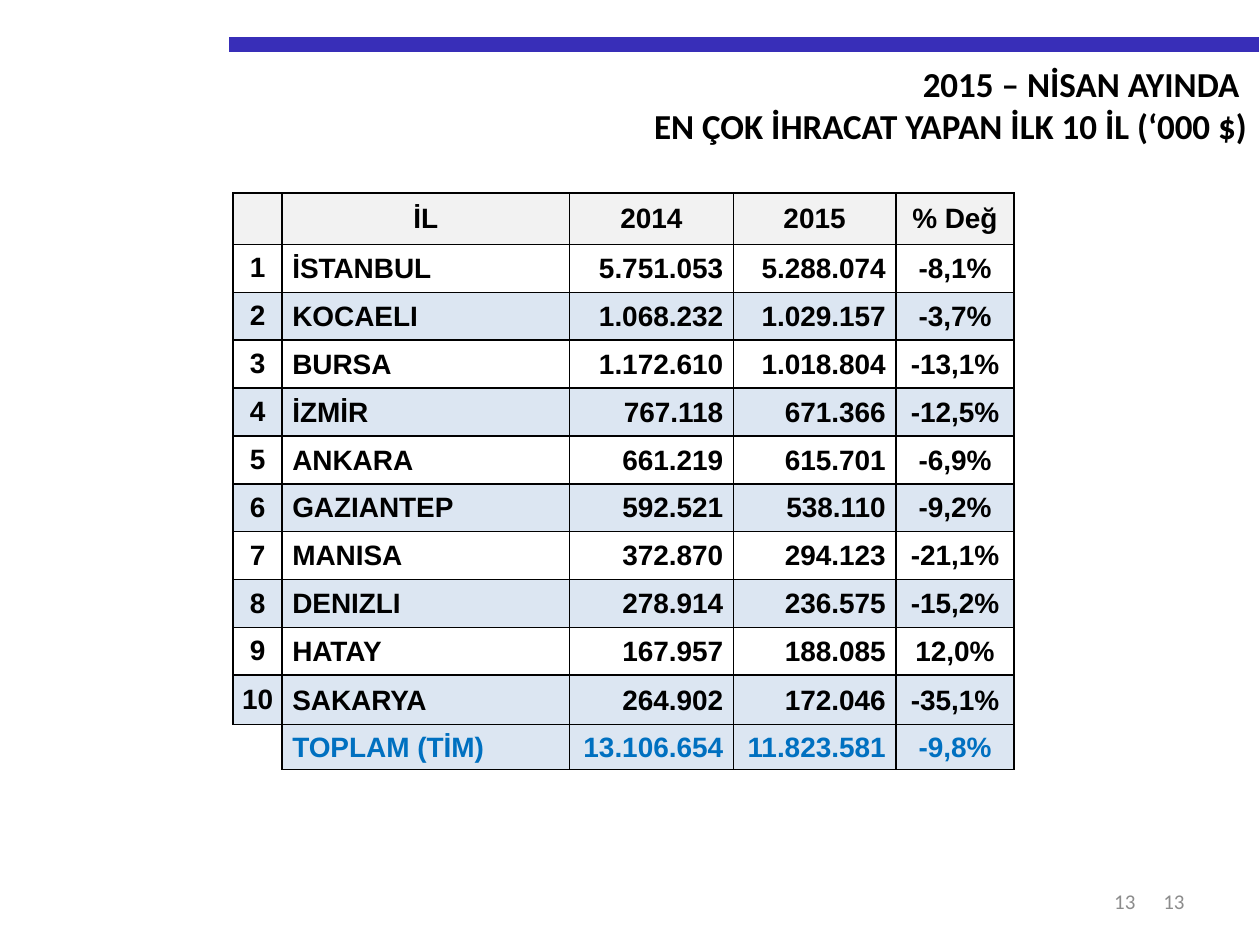
from lxml import etree
from pptx import Presentation
from pptx.dml.color import RGBColor
from pptx.enum.shapes import MSO_CONNECTOR
from pptx.enum.text import MSO_ANCHOR, PP_ALIGN
from pptx.oxml.ns import qn
from pptx.util import Inches, Pt

LEFT, CENTER, RIGHT = PP_ALIGN.LEFT, PP_ALIGN.CENTER, PP_ALIGN.RIGHT
MIDDLE, TOP = MSO_ANCHOR.MIDDLE, MSO_ANCHOR.TOP
STRAIGHT = MSO_CONNECTOR.STRAIGHT

BLACK, BLUE, GRAY, BAR_COLOR = "000000", "0070C0", "8C8C8C", "382EB8"
HEADER_FILL, BAND_FILL = "F2F2F2", "DCE6F2"

COLUMN_WIDTHS = [0.39, 2.28, 1.3, 1.29, 0.94]
ROW_HEIGHTS = [0.41] + [0.38] * 9 + [0.39, 0.36]
BODY_ALIGNMENTS = [CENTER, LEFT, RIGHT, RIGHT, CENTER]
HEADER_MARGINS = (0.1, 0.05, 0.1, 0.05)
BODY_MARGINS = [
    (0, 0, 0, 0),
    (0.08, 0.01, 0.01, 0),
    (0.01, 0.01, 0.08, 0),
    (0.01, 0.01, 0.08, 0),
    (0.01, 0.01, 0.01, 0),
]
HEADER = ["", "İL", "2014", "2015", "% Değ"]
PROVINCES = [
    ["İSTANBUL", "5.751.053", "5.288.074", "-8,1%"],
    ["KOCAELI", "1.068.232", "1.029.157", "-3,7%"],
    ["BURSA", "1.172.610", "1.018.804", "-13,1%"],
    ["İZMİR", "767.118", "671.366", "-12,5%"],
    ["ANKARA", "661.219", "615.701", "-6,9%"],
    ["GAZIANTEP", "592.521", "538.110", "-9,2%"],
    ["MANISA", "372.870", "294.123", "-21,1%"],
    ["DENIZLI", "278.914", "236.575", "-15,2%"],
    ["HATAY", "167.957", "188.085", "12,0%"],
    ["SAKARYA", "264.902", "172.046", "-35,1%"],
]
TOTAL = ["", "TOPLAM (TİM)", "13.106.654", "11.823.581", "-9,8%"]


def color(hex_string):
    return RGBColor.from_string(hex_string)


def style_paragraph(paragraph, alignment, font_name, size, font_color, bold):
    paragraph.alignment = alignment
    font = paragraph.font
    font.name, font.size, font.bold = font_name, Pt(size), bold
    font.color.rgb = color(font_color)


def add_text(slide, left, top, width, height, lines, size, font_color, bold, anchor):
    """Add a right-aligned Calibri text box with one paragraph per line."""
    box = slide.shapes.add_textbox(
        Inches(left), Inches(top), Inches(width), Inches(height))
    frame = box.text_frame
    frame.word_wrap = True
    frame.vertical_anchor = anchor
    frame.text = "\n".join(lines)
    for paragraph in frame.paragraphs:
        style_paragraph(paragraph, RIGHT, "Calibri", size, font_color, bold)


def add_bar(slide, left, right, y, weight):
    bar = slide.shapes.add_connector(
        STRAIGHT, Inches(left), Inches(y), Inches(right), Inches(y))
    bar.line.color.rgb = color(BAR_COLOR)
    bar.line.width = Pt(weight)
    etree.SubElement(bar.element.spPr, qn("a:effectLst"))


def set_borders(cell, sides):
    """Draw thin black borders on the named sides (L, R, T, B) and hide the others."""
    properties = cell._tc.get_or_add_tcPr()
    for side in "LRTB":
        line = etree.SubElement(properties, qn(f"a:ln{side}"), w=str(Pt(1)))
        if side in sides:
            fill = etree.SubElement(line, qn("a:solidFill"))
            etree.SubElement(fill, qn("a:srgbClr"), val=BLACK)
        else:
            etree.SubElement(line, qn("a:noFill"))


def fill_cell(cell, text, alignment, margins, fill, font_color, borders):
    set_borders(cell, borders)
    if fill:
        cell.fill.solid()
        cell.fill.fore_color.rgb = color(fill)
    else:
        cell.fill.background()
    (cell.margin_left, cell.margin_top,
     cell.margin_right, cell.margin_bottom) = map(Inches, margins)
    cell.vertical_anchor = MIDDLE
    cell.text = text
    style_paragraph(cell.text_frame.paragraphs[0], alignment, "Arial", 16,
                    font_color, True)


def add_export_table(slide, left, top):
    ranked = [[str(rank), *values] for rank, values in enumerate(PROVINCES, 1)]
    rows = [HEADER, *ranked, TOTAL]
    last = len(rows) - 1
    frame = slide.shapes.add_table(
        len(rows), len(HEADER), Inches(left), Inches(top),
        Inches(sum(COLUMN_WIDTHS)), Inches(sum(ROW_HEIGHTS)))
    table = frame.table
    for column, width in zip(table.columns, COLUMN_WIDTHS):
        column.width = Inches(width)
    for row, height in zip(table.rows, ROW_HEIGHTS):
        row.height = Inches(height)

    for i, values in enumerate(rows):
        for j, text in enumerate(values):
            alignment = CENTER if i == 0 else BODY_ALIGNMENTS[j]
            margins = HEADER_MARGINS if i == 0 and text else BODY_MARGINS[j]
            font_color = BLUE if i == last else BLACK
            borders = "LRTB"
            if i == 0:
                fill = HEADER_FILL
            elif i == last and j == 0:
                fill, borders = None, "RT"
            else:
                fill = BAND_FILL if i == last or i % 2 == 0 else None
            fill_cell(table.cell(i, j), text, alignment, margins, fill,
                      font_color, borders)


def main():
    presentation = Presentation()
    presentation.slide_width, presentation.slide_height = Inches(10), Inches(7.5)
    slide = presentation.slides.add_slide(presentation.slide_layouts[6])

    add_bar(slide, 1.82, 9.99, 0.35, 8.5)
    for left, width in [(7.17, 2.33), (7.01, 2.1)]:
        add_text(slide, left, 6.95, width, 0.4, ["13"], 12, GRAY, False, MIDDLE)
    title = ["2015 – NİSAN AYINDA ", "EN ÇOK İHRACAT YAPAN İLK 10 İL (‘000 $)"]
    add_text(slide, 1.06, 0.45, 8.94, 0.77, title, 20, BLACK, True, TOP)
    add_export_table(slide, 1.85, 1.53)

    presentation.save("out.pptx")


if __name__ == "__main__":
    main()
